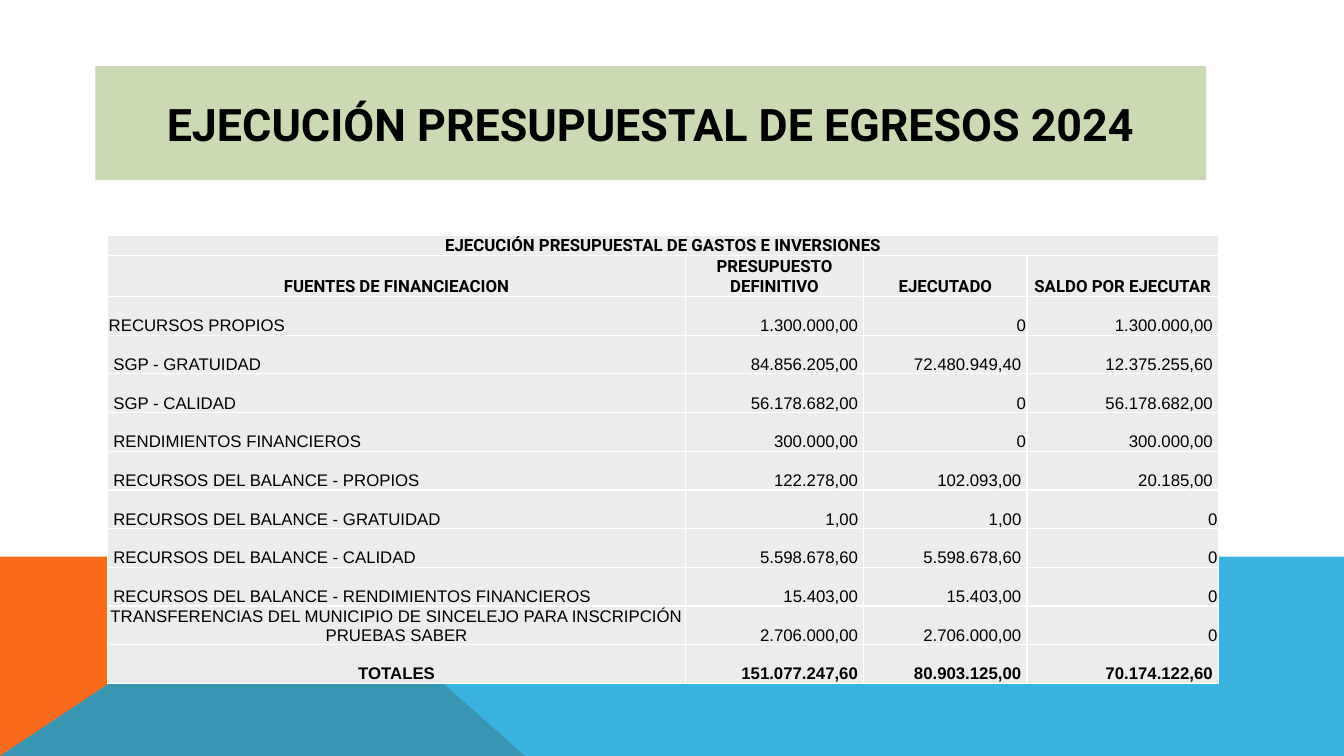
from dataclasses import dataclass

import pptx
import pptx.dml.color
import pptx.enum.text
import pptx.oxml
import pptx.oxml.ns
import pptx.util
from lxml import etree

Pt = pptx.util.Pt
Align = pptx.enum.text.PP_ALIGN
Anchor = pptx.enum.text.MSO_ANCHOR
qn = pptx.oxml.ns.qn


@dataclass(frozen=True)
class Theme:
    orange: str = "F96A1B"
    blue: str = "08A1D9"
    title_fill: str = "CCDAB3"
    cell_fill: str = "ECECEC"
    border: str = "FFFFFF"
    ink: str = "000000"
    heading_font: str = "Roboto"
    body_font: str = "Arial"
    title_size: int = 32
    table_size: int = 12


theme = Theme()


def paint(fill, colour):
    fill.solid()
    fill.fore_color.rgb = pptx.dml.color.RGBColor.from_string(colour)


def style_text(para, font_name, size, bold, align):
    para.alignment = align
    for span in para.runs:
        span.font.name = font_name
        span.font.size = Pt(size)
        span.font.bold = bold
        paint(span.font.fill, theme.ink)


deck = pptx.Presentation()
deck.slide_width, deck.slide_height = Pt(960), Pt(540)
page = deck.slides.add_slide(deck.slide_layouts[5])

# Title
title = page.shapes.title
title.left, title.top, title.width, title.height = Pt(68.2), Pt(47.3), Pt(793.4), Pt(81.3)
paint(title.fill, theme.title_fill)
title.text_frame.text = "EJECUCIÓN PRESUPUESTAL DE EGRESOS 2024"
title.text_frame.vertical_anchor = Anchor.MIDDLE
style_text(title.text_frame.paragraphs[0], theme.heading_font, theme.title_size, True, Align.CENTER)

# Coloured bands along the bottom
bands = [
    (theme.orange, 100, [(0, 540), (0, 397.6), (214.5, 397.6), (375, 540)]),
    (theme.blue, 80, [(0, 540), (214, 397.6), (960, 397.6), (960, 540)]),
]
for colour, opacity, points in bands:
    corners = [(Pt(x), Pt(y)) for x, y in points]
    builder = page.shapes.build_freeform(*corners[0])
    builder.add_line_segments(corners[1:], close=True)
    band = builder.convert_to_shape()
    band.shadow.inherit = False
    band.line.fill.background()
    paint(band.fill, colour)
    if opacity < 100:
        tint = band.fill._xPr.find(qn("a:solidFill"))[0]
        etree.SubElement(tint, qn("a:alpha"), val=str(opacity * 1000))

# Budget table
rows = [
    ("EJECUCIÓN PRESUPUESTAL DE GASTOS E INVERSIONES", "", "", ""),
    ("FUENTES DE FINANCIEACION", "PRESUPUESTO DEFINITIVO", "EJECUTADO", "SALDO POR EJECUTAR"),
    ("RECURSOS PROPIOS", "1.300.000,00", "0", "1.300.000,00"),
    ("SGP - GRATUIDAD", "84.856.205,00", "72.480.949,40", "12.375.255,60"),
    ("SGP - CALIDAD", "56.178.682,00", "0", "56.178.682,00"),
    ("RENDIMIENTOS FINANCIEROS", "300.000,00", "0", "300.000,00"),
    ("RECURSOS DEL BALANCE - PROPIOS", "122.278,00", "102.093,00", "20.185,00"),
    ("RECURSOS DEL BALANCE - GRATUIDAD", "1,00", "1,00", "0"),
    ("RECURSOS DEL BALANCE - CALIDAD", "5.598.678,60", "5.598.678,60", "0"),
    ("RECURSOS DEL BALANCE - RENDIMIENTOS FINANCIEROS", "15.403,00", "15.403,00", "0"),
    ("TRANSFERENCIAS DEL MUNICIPIO DE SINCELEJO PARA INSCRIPCIÓN PRUEBAS SABER",
     "2.706.000,00", "2.706.000,00", "0"),
    ("TOTALES", "151.077.247,60", "80.903.125,00", "70.174.122,60"),
]
column_widths = [412.6, 127.4, 116.6, 136.8]
row_heights = [14.6, 29.2] + [27.65] * 10
header_rows, transfer_row, total_row = 2, 10, 11
edge, indent = 0.7, 4

frame = page.shapes.add_table(len(rows), len(column_widths), Pt(77), Pt(167.8),
                              Pt(sum(column_widths)), Pt(sum(row_heights)))
table = frame.table
table.first_row = table.horz_banding = False
for column, width in zip(table.columns, column_widths):
    column.width = Pt(width)
for row, height in zip(table.rows, row_heights):
    row.height = Pt(height)
table.cell(0, 0).merge(table.cell(0, 3))

for r, texts in enumerate(rows):
    for c, text in enumerate(texts):
        cell = table.cell(r, c)
        is_header = r < header_rows
        if is_header or (c == 0 and r >= transfer_row):
            align = Align.CENTER
        else:
            align = Align.RIGHT if c else Align.LEFT
        cell.text = text
        cell.vertical_anchor = Anchor.BOTTOM
        cell.margin_top, cell.margin_bottom = Pt(edge), 0
        cell.margin_left = Pt(indent if align == Align.LEFT and r > header_rows else edge)
        cell.margin_right = Pt(indent if align == Align.RIGHT and text != "0" else edge)
        style_text(cell.text_frame.paragraphs[0],
                   theme.heading_font if is_header else theme.body_font,
                   theme.table_size, is_header or r == total_row, align)
        properties = cell._tc.get_or_add_tcPr()
        for side in ("lnL", "lnR", "lnT", "lnB"):
            line = etree.SubElement(properties, qn("a:" + side), w=str(Pt(1)))
            line_fill = etree.SubElement(line, qn("a:solidFill"))
            etree.SubElement(line_fill, qn("a:srgbClr"), val=theme.border)
        paint(cell.fill, theme.cell_fill)

deck.save("out.pptx")
